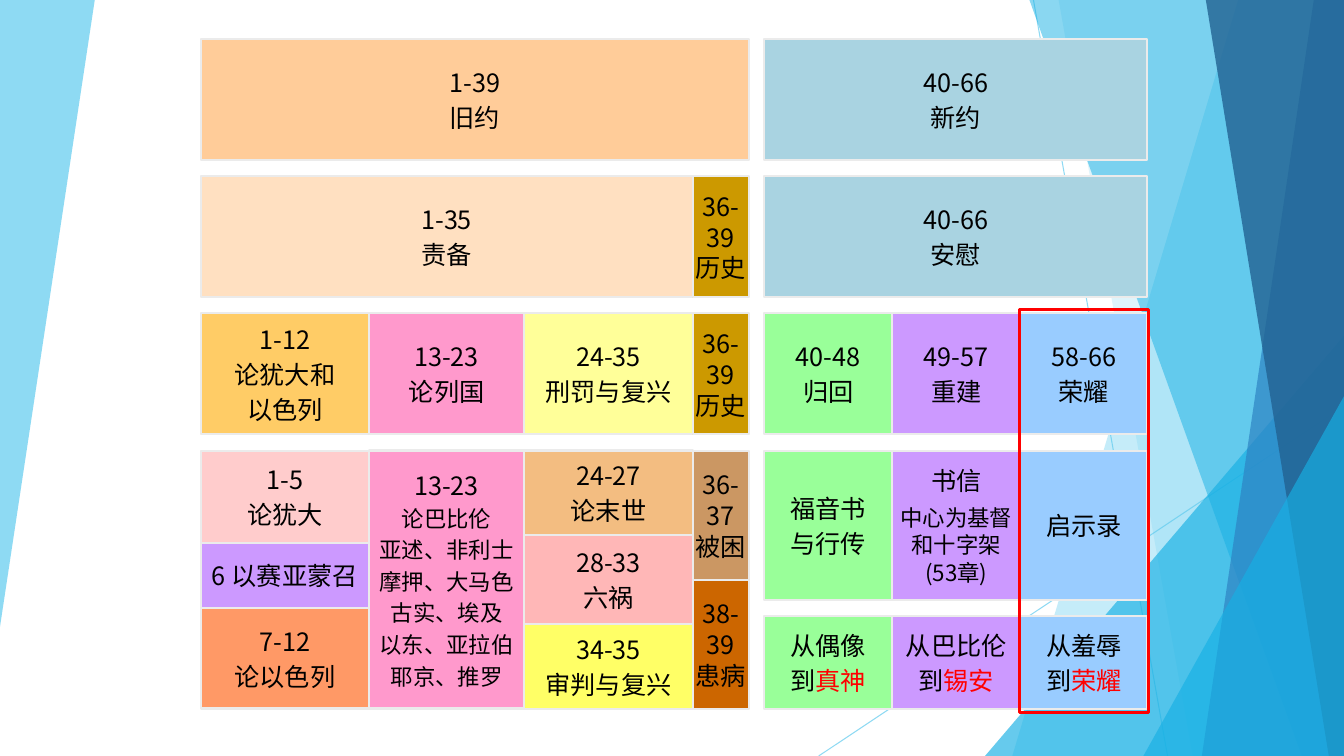
from lxml.etree import SubElement
from pptx import Presentation
from pptx.dml.color import RGBColor
from pptx.enum.shapes import MSO_CONNECTOR, MSO_SHAPE
from pptx.enum.text import MSO_ANCHOR, PP_ALIGN
from pptx.oxml.ns import qn
from pptx.util import Inches, Pt

FONT = "Noto Sans CJK SC"
BLACK, RED, BORDER = "000000", "FF0000", "EBEBEB"
SLIDE_WIDTH, SLIDE_HEIGHT = 13.33, 7.5

LEFT_PANEL = ([(0, 0), (0.94, 0), (0, 6.22)], "5FCBEF", 70)
RAYS = [((10.25, 0), (11.58, 7.5)), ((13.33, 4.03), (8.12, 7.5))]
RAY_COLOR, RAY_OPACITY = "5FCBEF", 70
BANDS_BEHIND = [
    (12.28, 10.04, "5FCBEF", 36),
    (10.5, 11.83, "5FCBEF", 20),
]
BANDS_FRONT = [
    (10.21, 12.91, "17B0E4", 50),
    (13.03, 11.92, "2E83C3", 70),
    (11.96, 13.18, "226292", 80),
]
BACK_TRIANGLE = (9.77, 3.33)
FRONT_TRIANGLE = (11.34, 3.93)

OLD_EDGES = [1.99, 3.66, 5.2, 6.87, 7.43]
NEW_EDGES = [7.58, 8.85, 10.12, 11.38]
ROW_TOP, ROW_STEP, ROW_HEIGHT = 0.39, 1.36, 1.2
GAP = ROW_STEP - ROW_HEIGHT

TIGHT = {"after": 0}
NATIONS = {"body_size": 16}
LETTERS = {"head_after": 6, "after": 0, "body_size": 16}

HISTORY = [(ROW_HEIGHT, "CC9900", ["36-", "39", "历史"], TIGHT)]
STACKS = [
    (0, OLD_EDGES, 0, 4, 0, [(ROW_HEIGHT, "FFCC99", ["1-39", "旧约"], {})]),
    (0, NEW_EDGES, 0, 3, 0, [(ROW_HEIGHT, "A9D3E1", ["40-66", "新约"], {})]),
    (1, OLD_EDGES, 0, 3, 0, [(ROW_HEIGHT, "FFE0C1", ["1-35", "责备"], {})]),
    (1, OLD_EDGES, 3, 4, 0, HISTORY),
    (1, NEW_EDGES, 0, 3, 0, [(ROW_HEIGHT, "A9D3E1", ["40-66", "安慰"], {})]),
    (2, OLD_EDGES, 0, 1, 0, [(ROW_HEIGHT, "FFCC66", ["1-12", "论犹大和", "以色列"], {})]),
    (2, OLD_EDGES, 1, 2, 0, [(ROW_HEIGHT, "FF99CC", ["13-23", "论列国"], {})]),
    (2, OLD_EDGES, 2, 3, 0, [(ROW_HEIGHT, "FFFF99", ["24-35", "刑罚与复兴"], {})]),
    (2, OLD_EDGES, 3, 4, 0, HISTORY),
    (2, NEW_EDGES, 0, 1, 0, [(ROW_HEIGHT, "99FF99", ["40-48", "归回"], {})]),
    (2, NEW_EDGES, 1, 2, 0, [(ROW_HEIGHT, "CC99FF", ["49-57", "重建"], {})]),
    (2, NEW_EDGES, 2, 3, 0, [(ROW_HEIGHT, "99CCFF", ["58-66", "荣耀"], {})]),
    (3, OLD_EDGES, 0, 1, 0, [
        (0.92, "FFCCCC", ["1-5", "论犹大"], {}),
        (0.64, "CC99FF", ["6 以赛亚蒙召"], {}),
        (1, "FF9966", ["7-12", "论以色列"], {}),
    ]),
    (3, OLD_EDGES, 1, 2, 0, [
        (2.56, "FF99CC", ["13-23", "论巴比伦", "亚述、非利士", "摩押、大马色",
                          "古实、埃及", "以东、亚拉伯", "耶京、推罗"], NATIONS),
    ]),
    (3, OLD_EDGES, 2, 3, 0, [
        (0.84, "F3BD81", ["24-27", "论末世"], {}),
        (0.88, "FFB7B7", ["28-33", "六祸"], {}),
        (0.84, "FFFF66", ["34-35", "审判与复兴"], {}),
    ]),
    (3, OLD_EDGES, 3, 4, 0, [
        (1.28, "CB9763", ["36-", "37", "被困"], TIGHT),
        (1.28, "CC6600", ["38-", "39", "患病"], TIGHT),
    ]),
    (3, NEW_EDGES, 0, 1, GAP, [
        (1.48, "99FF99", ["福音书", "与行传"], {}),
        (0.92, "99FF99", ["从偶像", "到|真神"], {}),
    ]),
    (3, NEW_EDGES, 1, 2, GAP, [
        (1.48, "CC99FF", ["书信", "中心为基督", "和十字架", "(53章)"], LETTERS),
        (0.92, "CC99FF", ["从巴比伦", "到|锡安"], {}),
    ]),
    (3, NEW_EDGES, 2, 3, GAP, [
        (1.48, "99CCFF", ["启示录"], {}),
        (0.92, "99CCFF", ["从羞辱", "到|荣耀"], {}),
    ]),
]
HIGHLIGHT = (10.11, 3.07, 1.28, 4)


def rgb(color):
    return RGBColor.from_string(color)


def set_opacity(shape, percent):
    for color in shape._element.spPr.iter(qn("a:srgbClr")):
        SubElement(color, qn("a:alpha")).set("val", str(percent * 1000))


def paint(shape, color, opacity):
    shape.shadow.inherit = False
    shape.fill.solid()
    shape.fill.fore_color.rgb = rgb(color)
    shape.line.fill.background()
    set_opacity(shape, opacity)


def add_panel(points, color, opacity):
    corners = [(Inches(x), Inches(y)) for x, y in points]
    outline = slide.shapes.build_freeform(*corners[0], scale=1)
    outline.add_line_segments(corners[1:], close=True)
    paint(outline.convert_to_shape(), color, opacity)


def add_band(top_x, bottom_x, color, opacity):
    add_panel([(top_x, 0), (SLIDE_WIDTH, 0), (SLIDE_WIDTH, SLIDE_HEIGHT),
               (bottom_x, SLIDE_HEIGHT)], color, opacity)


def add_triangle(left, top):
    triangle = slide.shapes.add_shape(
        MSO_SHAPE.ISOSCELES_TRIANGLE, Inches(left), Inches(top),
        Inches(SLIDE_WIDTH - left), Inches(SLIDE_HEIGHT - top))
    triangle.adjustments[0] = 1
    paint(triangle, "17B0E4", 66)


def add_ray(start, end):
    ray = slide.shapes.add_connector(
        MSO_CONNECTOR.STRAIGHT, *map(Inches, start + end))
    ray.line.color.rgb = rgb(RAY_COLOR)
    ray.line.width = Pt(0.75)
    SubElement(ray._element.spPr, qn("a:effectLst"))
    set_opacity(ray, RAY_OPACITY)


def write(frame, lines, size=18, body_size=18, head_after=None, after=3):
    frame.word_wrap = False
    frame.vertical_anchor = MSO_ANCHOR.MIDDLE
    frame.margin_left = frame.margin_right = frame.margin_top = frame.margin_bottom = 0
    for index, line in enumerate(lines):
        paragraph = frame.add_paragraph() if index else frame.paragraphs[0]
        line_size = body_size if index else size
        paragraph.alignment = PP_ALIGN.CENTER
        paragraph.line_spacing = Pt(22 if line_size == 18 else 19.5)
        paragraph.space_after = Pt(after if index or head_after is None else head_after)
        for words, color in zip(line.split("|"), (BLACK, RED)):
            run = paragraph.add_run()
            run.text = words
            run.font.size = Pt(line_size)
            run.font.name = FONT
            run.font.color.rgb = rgb(color)
            SubElement(run.font._element, qn("a:ea")).set("typeface", FONT)


def add_box(left, top, width, height, border, weight, fill=None):
    box = slide.shapes.add_shape(
        MSO_SHAPE.RECTANGLE, *map(Inches, (left, top, width, height)))
    box.shadow.inherit = False
    if fill:
        box.fill.solid()
        box.fill.fore_color.rgb = rgb(fill)
    else:
        box.fill.background()
    box.line.color.rgb = rgb(border)
    box.line.width = Pt(weight)
    return box


deck = Presentation()
deck.slide_width, deck.slide_height = Inches(SLIDE_WIDTH), Inches(SLIDE_HEIGHT)
slide = deck.slides.add_slide(deck.slide_layouts[6])

add_panel(*LEFT_PANEL)
for ray_start, ray_end in RAYS:
    add_ray(ray_start, ray_end)
for band in BANDS_BEHIND:
    add_band(*band)
add_triangle(*BACK_TRIANGLE)
for band in BANDS_FRONT:
    add_band(*band)
add_triangle(*FRONT_TRIANGLE)

for row, edges, first, last, gap, sections in STACKS:
    section_top = ROW_TOP + row * ROW_STEP
    for height, fill, lines, style in sections:
        section = add_box(edges[first], section_top, edges[last] - edges[first],
                          height, BORDER, 1.5, fill)
        write(section.text_frame, lines, **style)
        section_top += height + gap

add_box(*HIGHLIGHT, RED, 2.25)
deck.save("out.pptx")
